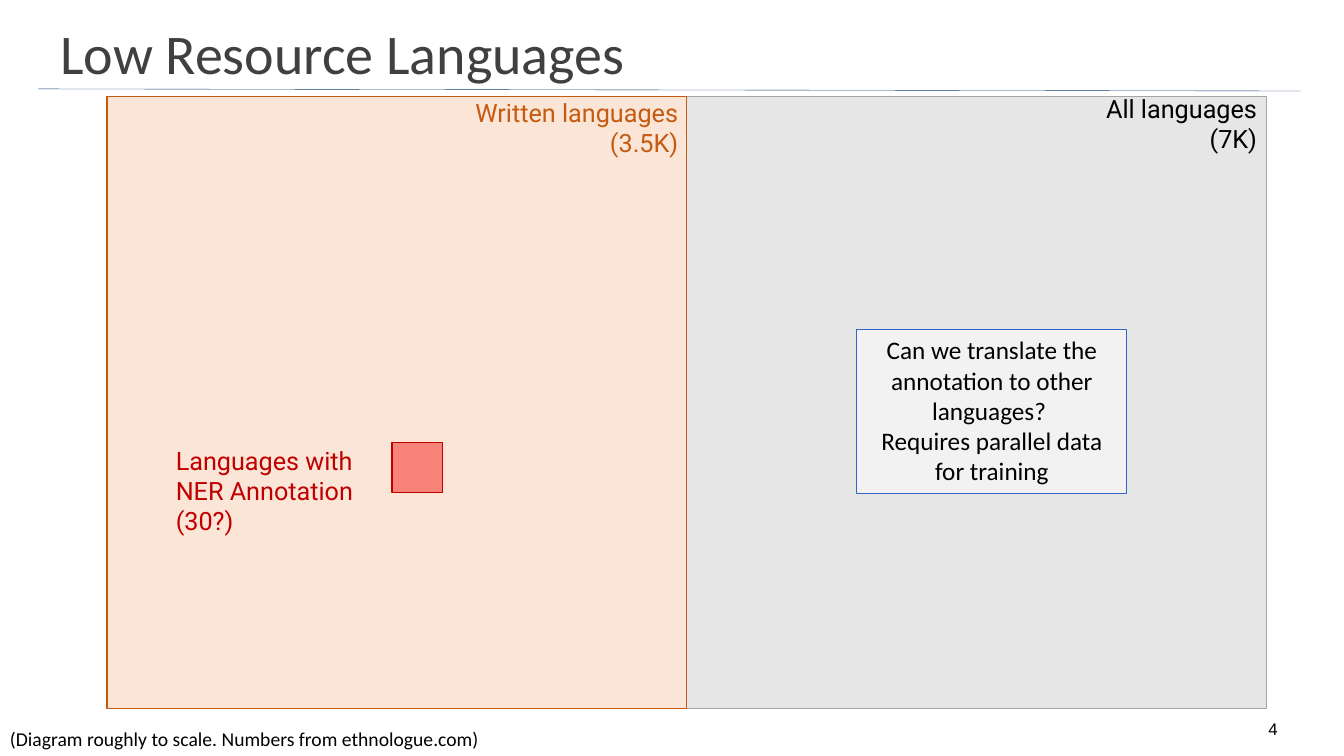
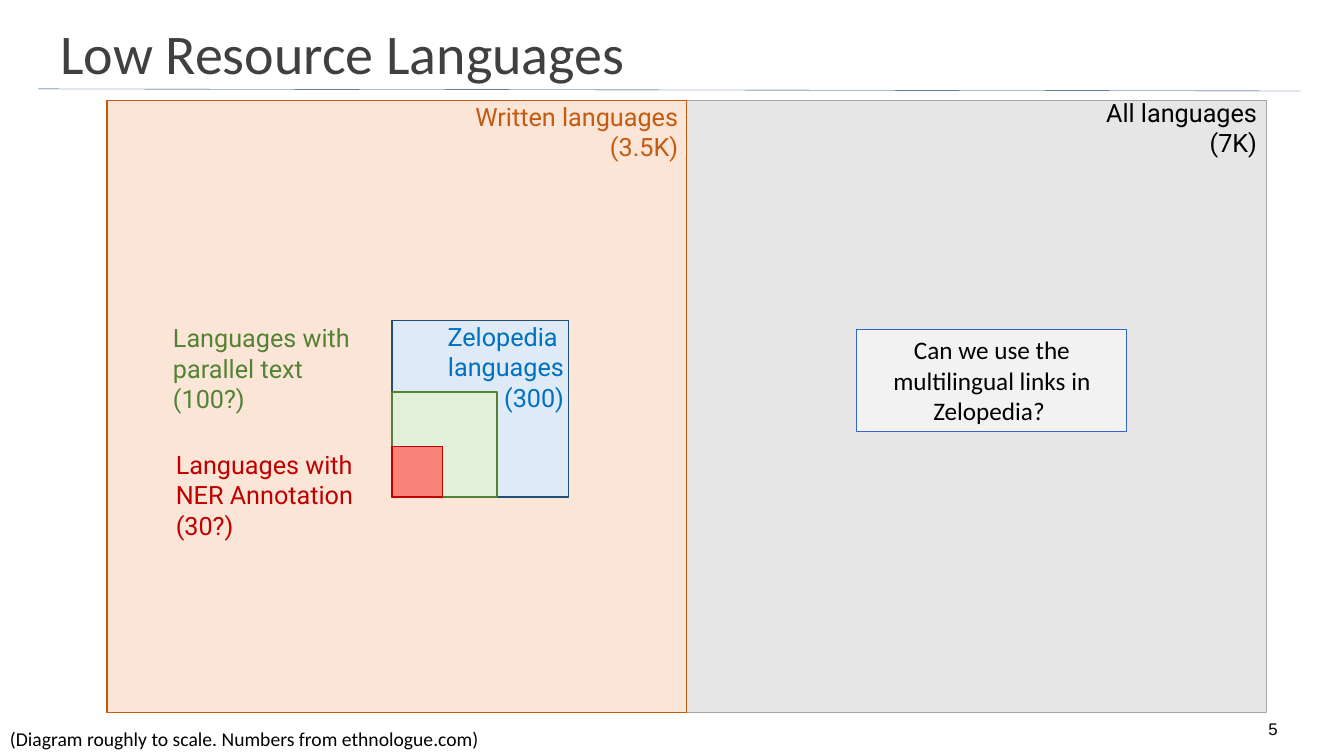
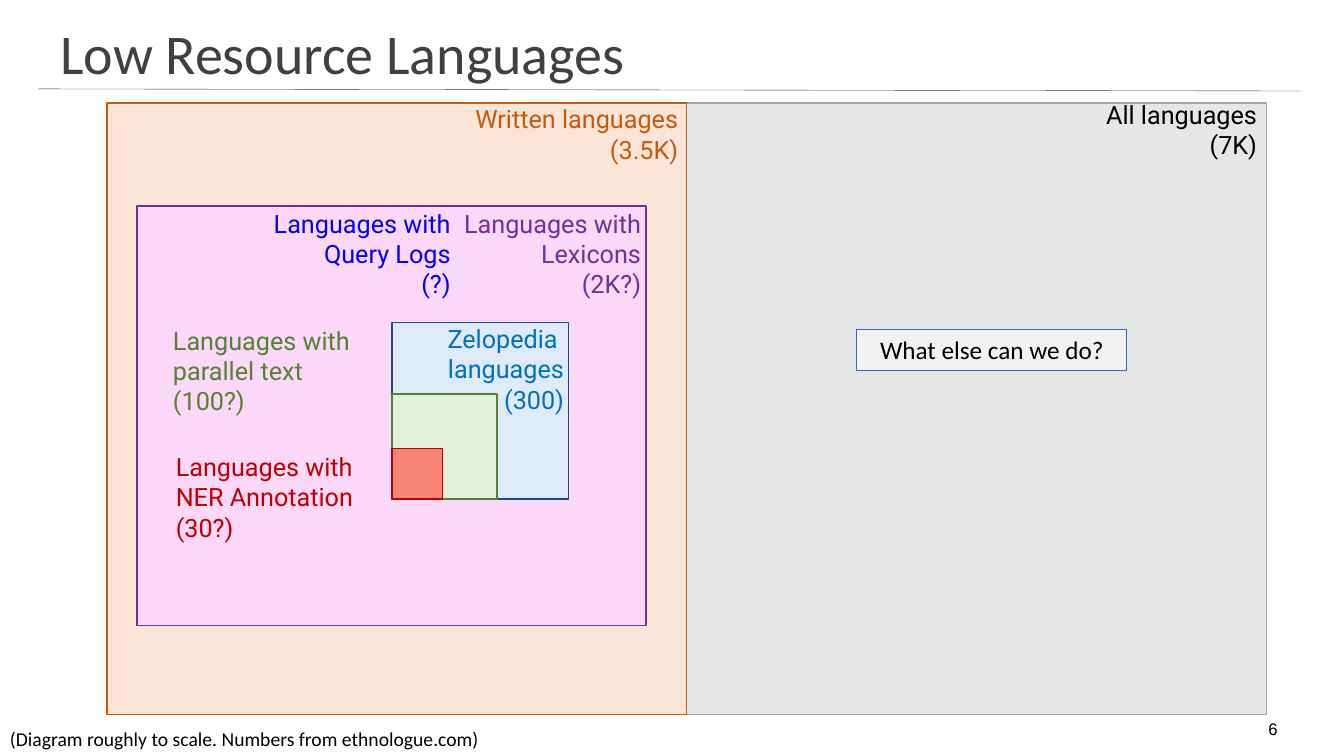
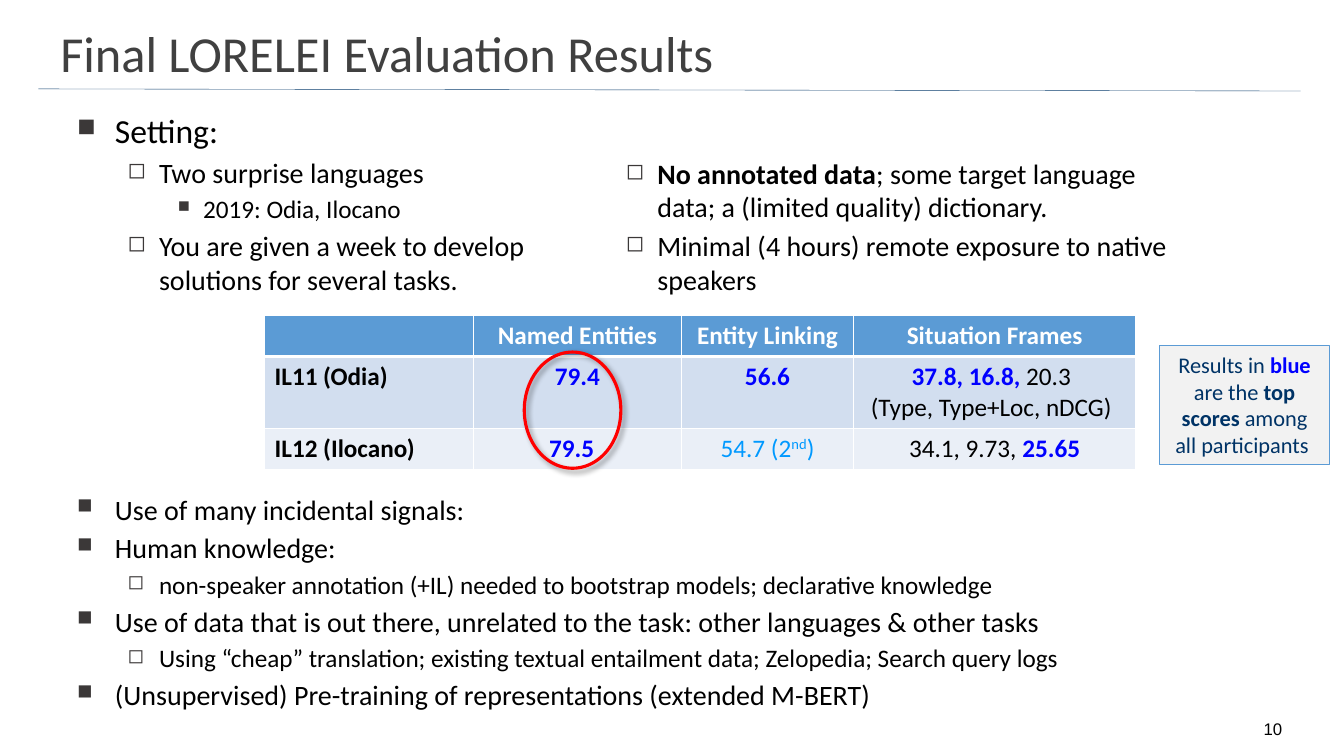
"""Builds four slides on low resource languages and the LORELEI results."""
from lxml import etree
from pptx import Presentation
from pptx.dml.color import RGBColor
from pptx.enum import shapes, text
from pptx.oxml import ns
from pptx.util import Pt

COLORS = {
    "black": "000000", "white": "FFFFFF", "title": "404040", "rule": "093D6E",
    "all": "E7E6E6", "all_edge": "A6A6A6", "written": "FBE5D6", "written_edge": "C55A11",
    "lexicon": "FBD8F7", "lexicon_edge": "7030A0", "wiki": "DEEBF7", "wiki_edge": "1F4E79",
    "wiki_text": "0070C0", "parallel": "E2F0D9", "parallel_edge": "548235",
    "ner": "F88379", "ner_edge": "C00000", "query": "0000FF", "callout": "F2F2F2",
    "callout_edge": "3366CC", "header": "5B9BD5", "odd_row": "D2DEEF", "even_row": "EAEFF7",
    "top_score": "0000FF", "second": "0099FF", "remark": "003366", "ring": "FF0000",
    "bullet": "3B3838",
}
COLORS = {name: RGBColor.from_string(value) for name, value in COLORS.items()}
LEFT, CENTER, RIGHT = text.PP_ALIGN.LEFT, text.PP_ALIGN.CENTER, text.PP_ALIGN.RIGHT
TOP, MIDDLE, BOTTOM = text.MSO_ANCHOR.TOP, text.MSO_ANCHOR.MIDDLE, text.MSO_ANCHOR.BOTTOM
BOLD = {"bold": True}
BLUE = {"bold": True, "color": "top_score"}


def write(frame, paragraphs, align=LEFT, anchor=TOP, **base):
    """Fill a text frame; a run is a string or a (string, format) pair."""
    frame.word_wrap = True
    frame.vertical_anchor = anchor
    for number, runs in enumerate(paragraphs):
        paragraph = frame.add_paragraph() if number else frame.paragraphs[0]
        paragraph.alignment = align
        for part in [runs] if isinstance(runs, str) else runs:
            words, changes = (part, {}) if isinstance(part, str) else part
            run = paragraph.add_run()
            run.text = words
            style = {"name": "Calibri", "size": 18, "color": "black", **base, **changes}
            run.font.color.rgb = COLORS[style.pop("color")]
            style["size"] = Pt(style["size"])
            for key, value in style.items():
                setattr(run.font, key, value)


def draw(slide, at, fill, edge, weight=1, kind=shapes.MSO_SHAPE.RECTANGLE):
    """Add a preset shape without a shadow."""
    shape = slide.shapes.add_shape(kind, *map(Pt, at))
    shape.shadow.inherit = False
    if fill:
        shape.fill.solid()
        shape.fill.fore_color.rgb = COLORS[fill]
    else:
        shape.fill.background()
    shape.line.color.rgb = COLORS[edge]
    shape.line.width = Pt(weight)
    return shape


deck = Presentation()
deck.slide_width, deck.slide_height = Pt(960), Pt(540)

pages = [("Low Resource Languages", 40, 4), ("Low Resource Languages", 40, 5),
         ("Low Resource Languages", 40, 6), ("Final LORELEI Evaluation Results", 36, 10)]
slides = []
for heading, size, number in pages:
    slide = deck.slides.add_slide(deck.slide_layouts[6])
    rule = slide.shapes.add_connector(
        shapes.MSO_CONNECTOR.STRAIGHT, Pt(27.5), Pt(63.5), Pt(929), Pt(65))
    rule.line.color.rgb = COLORS["rule"]
    rule.line.width = Pt(0.25)
    etree.SubElement(rule._element.spPr, ns.qn("a:effectLst"))
    title = slide.shapes.add_textbox(Pt(36), Pt(16.5), Pt(778), Pt(42))
    write(title.text_frame, [heading], anchor=MIDDLE, size=size, color="title")
    folio = slide.shapes.add_textbox(Pt(889), Pt(513), Pt(40.5), Pt(18))
    write(folio.text_frame, [str(number)], CENTER, BOTTOM, size=12, name="Arial")
    slides.append(slide)

PANEL_LEFT, PANEL_WIDTH, PANEL_HEIGHT = 76.5, 828, 437
CORE_LEFT, CORE_BOTTOM = 280, 283
LABEL_WIDTH, LABEL_HEIGHT = 160, 72
wiki, parallel, ner = [(CORE_LEFT, CORE_BOTTOM - side, side, side) for side in (126, 75, 36)]

regions = [
    (1, (PANEL_LEFT, 0, PANEL_WIDTH, PANEL_HEIGHT), "all", "all_edge", "black",
     (905, -6), RIGHT, ["All languages", "(7K)"]),
    (1, (PANEL_LEFT, 0, PANEL_WIDTH / 2, PANEL_HEIGHT), "written", "written_edge",
     "written_edge", (491.5, -3), RIGHT, ["Written languages", "(3.5K)"]),
    (3, (98, 73.5, 363.5, 300), "lexicon", "lexicon_edge", "lexicon_edge",
     (465, 71.5), RIGHT, ["Languages with", "Lexicons", "(2K?)"]),
    (2, wiki, "wiki", "wiki_edge", "wiki_text",
     (410, 154), RIGHT, ["Zelopedia ", "languages", "(300)"]),
    (2, parallel, "parallel", "parallel_edge", "parallel_edge",
     (116.5, 155), LEFT, ["Languages with", "parallel text", "(100?)"]),
    (1, ner, "ner", "ner_edge", "ner_edge",
     (118.5, 245.5), LEFT, ["Languages with", "NER Annotation", "(30?)"]),
    (3, None, None, None, "query",
     (329, 71.5), RIGHT, ["Languages with", "Query Logs", "(?)"]),
]
questions = [
    (69, 117, ["Can we translate the annotation to other languages? ",
               "Requires parallel data for training"]),
    (72, 73, ["Can we use the multilingual links in Zelopedia? "]),
    (73.5, 29, ["What else can we do?"]),
]
for step, (slide, (panel_top, height, question)) in enumerate(zip(slides, questions), 1):
    for first_step, area, fill, edge, ink, (x, y), align, lines in regions:
        if step < first_step:
            continue
        if area:
            left, top, *extent = area
            draw(slide, (left, panel_top + top, *extent), fill, edge)
        label_left = x - LABEL_WIDTH if align == RIGHT else x
        label = slide.shapes.add_textbox(
            Pt(label_left), Pt(panel_top + y), Pt(LABEL_WIDTH), Pt(LABEL_HEIGHT))
        write(label.text_frame, lines, align, name="Roboto", color=ink)
    callout = draw(slide, (612, 235.5, 193, height), "callout", "callout_edge", 0.75)
    write(callout.text_frame, question, CENTER)
    scale_remark = slide.shapes.add_textbox(Pt(0), Pt(516), Pt(400), Pt(24))
    write(scale_remark.text_frame,
          ["(Diagram roughly to scale. Numbers from ethnologue.com)"], size=14)

results = slides[3]
levels = [(27, 27, 75, "■"), (58.5, 22.5, 80, "◻"), (90, 18, 65, "■")]
outlines = [
    ((48, 75, 384, 147), [
        (0, 24, "Setting:"),
        (1, 20, "Two surprise languages"),
        (2, 18, "2019: Odia, Ilocano"),
        (1, 20, "You are given a week to develop solutions for several tasks.")]),
    ((404, 108, 437, 114), [
        (1, 20, [("No annotated data", BOLD),
                 "; some target language data; a (limited quality) dictionary."]),
        (1, 20, "Minimal (4 hours) remote exposure to native speakers")]),
    ((48, 348, 893, 160), [
        (0, 20, "Use of many incidental signals:"),
        (0, 20, "Human knowledge:"),
        (1, 18, "non-speaker annotation (+IL) needed to bootstrap models; "
                "declarative knowledge"),
        (0, 20, "Use of data that is out there, unrelated to the task: "
                "other languages & other tasks"),
        (1, 18, "Using “cheap” translation; existing textual entailment data; "
                "Zelopedia; Search query logs"),
        (0, 20, "(Unsupervised) Pre-training of representations (extended M-BERT)")]),
]
for at, items in outlines:
    outline = results.shapes.add_textbox(*map(Pt, at)).text_frame
    write(outline, [runs for _, _, runs in items])
    for number, (paragraph, (level, size, _)) in enumerate(zip(outline.paragraphs, items)):
        margin, hanging, percent, mark = levels[level]
        paragraph.level = level
        if number:
            paragraph.space_before = Pt(round(size * 0.18, 1))
        for run in paragraph.runs:
            run.font.size = Pt(size)
        properties = paragraph._p.get_or_add_pPr()
        properties.set("marL", str(Pt(margin)))
        properties.set("indent", str(-Pt(hanging)))
        tint = etree.SubElement(properties, ns.qn("a:buClr"))
        etree.SubElement(tint, ns.qn("a:srgbClr"), val=str(COLORS["bullet"]))
        etree.SubElement(properties, ns.qn("a:buSzPct"), val=str(percent * 1000))
        etree.SubElement(properties, ns.qn("a:buChar"), char=mark)

HEAD = {"bold": True, "color": "white"}
SECOND = {"color": "second"}
scores = [
    ("header", [[], [[("Named Entities", HEAD)]], [[("Entity Linking", HEAD)]],
                [[("Situation Frames", HEAD)]]]),
    ("odd_row", [[[("IL11 (Odia)", BOLD)]], [[("79.4", BLUE)]], [[("56.6", BLUE)]],
                 [[("37.8, 16.8, ", BLUE), "20.3"], "(Type, Type+Loc, nDCG)"]]),
    ("even_row", [[[("IL12 (Ilocano)", BOLD)]], [[("79.5", BLUE)]],
                  [[("54.7 (2", SECOND), ("nd", SECOND), (")", SECOND)]],
                  [["34.1, 9.73, ", ("25.65", BLUE)]]]),
]
right_margins = {(1, 3): 12, (2, 1): 15.5}
table = results.shapes.add_table(3, 4, Pt(189), Pt(225.5), Pt(622.5), Pt(109.6)).table
for column, width in zip(table.columns, (149, 149, 122.5, 202)):
    column.width = Pt(width)
for row, height in zip(table.rows, (29.2, 51.2, 29.2)):
    row.height = Pt(height)
for r, (fill, cells) in enumerate(scores):
    for c, lines in enumerate(cells):
        cell = table.cell(r, c)
        write(cell.text_frame, lines, CENTER if c else LEFT)
        cell.margin_right = Pt(right_margins.get((r, c), 7.2))
        properties = cell._tc.get_or_add_tcPr()
        for side in "LRTB":
            thick = (r, side) in ((0, "B"), (1, "T"))
            border = etree.SubElement(
                properties, ns.qn("a:ln" + side), w=str(Pt(3 if thick else 1)))
            paint = etree.SubElement(border, ns.qn("a:solidFill"))
            etree.SubElement(paint, ns.qn("a:srgbClr"), val=str(COLORS["white"]))
        cell.fill.solid()
        cell.fill.fore_color.rgb = COLORS[fill]
ordinal = table.cell(2, 2).text_frame.paragraphs[0].runs[1]
ordinal._r.get_or_add_rPr().set("baseline", "30000")

legend = draw(results, (828, 247, 122, 85), "callout", "header", 0.75)
write(legend.text_frame,
      [["Results in ", ("blue ", BLUE), "are the", (" top scores ", BOLD),
        "among all participants "]], CENTER, size=16, color="remark")

ring = draw(results, (374.5, 251.5, 69, 83), None, "ring", 2.25, shapes.MSO_SHAPE.OVAL)
effects = ring._element.spPr.find(ns.qn("a:effectLst"))
shade = etree.SubElement(effects, ns.qn("a:outerShdw"), blurRad=str(Pt(4)),
                         dist=str(Pt(3)), dir=str(45 * 60000))
shade_color = etree.SubElement(shade, ns.qn("a:srgbClr"), val=str(COLORS["black"]))
etree.SubElement(shade_color, ns.qn("a:alpha"), val="40000")

deck.save("out.pptx")
